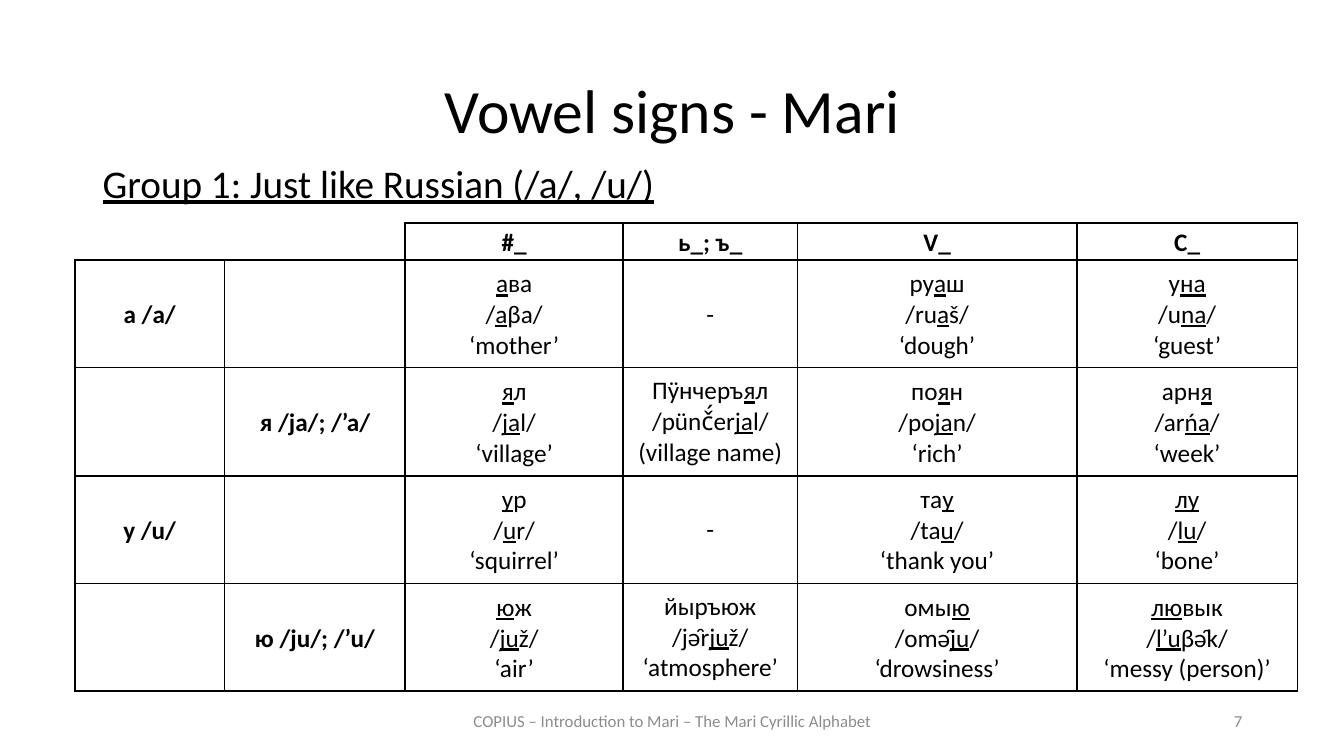
from pptx import Presentation
from pptx.dml.color import RGBColor
from pptx.enum.text import MSO_ANCHOR, PP_ALIGN
from pptx.util import Inches, Pt
from lxml import etree

LEFT, CENTER, RIGHT = PP_ALIGN.LEFT, PP_ALIGN.CENTER, PP_ALIGN.RIGHT
TOP, MIDDLE = MSO_ANCHOR.TOP, MSO_ANCHOR.MIDDLE
NS = "{http://schemas.openxmlformats.org/drawingml/2006/main}"

THEME = {
    "font": "Calibri",
    "ink": "000000",
    "muted": "8C8C8C",
    "title": 44,
    "subtitle": 28,
    "body": 18,
    "footer": 12,
    "thick": 1.5,
    "thin": 1,
}


def write_line(p, text, size, color="ink", align=CENTER, bold=False):
    p.alignment = align
    for i, part in enumerate(text.split("*")):
        if not part:
            continue
        r = p.add_run()
        r.text = part
        fmt = {"name": THEME["font"], "size": Pt(THEME[size]), "bold": bold, "underline": i % 2 == 1}
        for key, value in fmt.items():
            setattr(r.font, key, value)
        r.font.color.rgb = RGBColor.from_string(THEME[color])


def add_border(cell, side, weight):
    ln = etree.SubElement(cell._tc.get_or_add_tcPr(), NS + side, w=str(Pt(THEME[weight])))
    fill = etree.SubElement(ln, NS + "solidFill")
    etree.SubElement(fill, NS + "srgbClr", val=THEME["ink"])


prs = Presentation()
prs.slide_width, prs.slide_height = Inches(13.33), Inches(7.5)
s = prs.slides.add_slide(prs.slide_layouts[6])

texts = [
    ("Vowel signs - Mari", (0.92, 0.4, 11.5, 1.45), "title", "ink", CENTER, MIDDLE, 0.9),
    ("*Group 1: Just like Russian (/a/, /u/)*", (0.92, 1.58, 11.5, 0.53), "subtitle", "ink", LEFT, TOP, 0.9),
    ("COPIUS – Introduction to Mari – The Mari Cyrillic Alphabet", (4.42, 6.95, 4.5, 0.4),
     "footer", "muted", CENTER, MIDDLE, 1),
    ("7", (9.42, 6.95, 3, 0.4), "footer", "muted", RIGHT, MIDDLE, 1),
]
for text, box, size, color, align, anchor, spacing in texts:
    tf = s.shapes.add_textbox(*map(Inches, box)).text_frame
    tf.word_wrap = True
    tf.vertical_anchor = anchor
    p = tf.paragraphs[0]
    p.line_spacing = spacing
    write_line(p, text, size, color, align)

rows = [
    ["", "", "#_", "ь_; ъ_", "V_", "C_"],
    ["а /a/", "", "*а*ва\n/*a*βa/\n‘mother’", "-", "ру*а*ш\n/ru*a*š/\n‘dough’", "у*на*\n/u*na*/\n‘guest’"],
    ["", "я /ja/; /’a/", "*я*л\n/*ja*l/\n‘village’", "Пӱнчеръ*я*л\n/pünč́er*ja*l/\n(village name)",
     "по*я*н\n/po*ja*n/\n‘rich’", "арн*я*\n/ar*ńa*/\n‘week’"],
    ["у /u/", "", "*у*р\n/*u*r/\n‘squirrel’", "-", "та*у*\n/ta*u*/\n‘thank you’", "*лу*\n/*lu*/\n‘bone’"],
    ["", "ю /ju/; /’u/", "*ю*ж\n/*ju*ž/\n‘air’", "йыръюж\n/jə̑r*ju*ž/\n‘atmosphere’",
     "омы*ю*\n/omə̑*ju*/\n‘drowsiness’", "*лю*вык\n/*l’u*βə̑k/\n‘messy (person)’"],
]
col_widths = [1.49, 1.79, 2.16, 1.73, 2.77, 2.19]
row_heights = [0.37] + [1.07] * 4
col_edges = ["thick", "thin", "thick", "thin", "thin", "thick", "thick"]
row_edges = ["thick", "thick", "thin", "thick", "thin", "thick"]

table = s.shapes.add_table(
    len(rows), len(col_widths), Inches(0.74), Inches(2.21), Inches(sum(col_widths)), Inches(sum(row_heights))
).table
table.first_row = table.horz_banding = False
for col, width in zip(table.columns, col_widths):
    col.width = Inches(width)
for row, height in zip(table.rows, row_heights):
    row.height = Inches(height)

for y, row in enumerate(rows):
    for x, text in enumerate(row):
        cell = table.cell(y, x)
        corner = y == 0 and x < 2
        tight = x == 3 and y > 1
        side = Inches(0.07 if tight else 0.12)
        fmt = {"vertical_anchor": MIDDLE, "margin_left": side, "margin_right": side,
               "margin_top": Inches(0 if tight else 0.02), "margin_bottom": Inches(0)}
        for key, value in fmt.items():
            setattr(cell, key, value)
        edges = {"lnL": col_edges[x], "lnR": col_edges[x + 1], "lnT": row_edges[y], "lnB": row_edges[y + 1]}
        for name, weight in edges.items():
            if not corner or name == "lnB" or (name == "lnR" and x == 1):
                add_border(cell, name, weight)
        cell.fill.background()
        tf = cell.text_frame
        for i, line in enumerate(text.split("\n")):
            p = tf.add_paragraph() if i else tf.paragraphs[0]
            write_line(p, line, "body", bold=y == 0 or x < 2)

prs.save("out.pptx")
